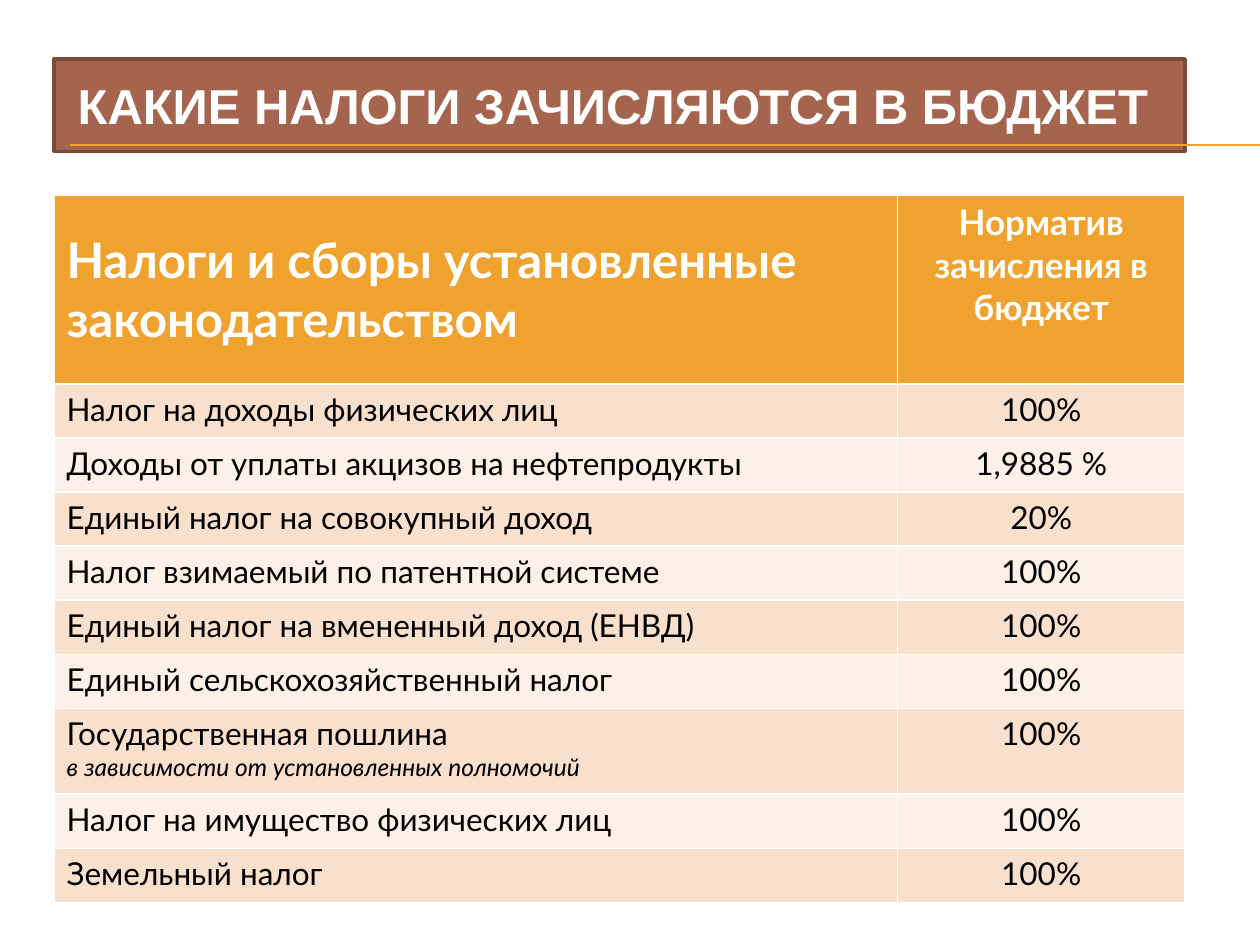
from pptx import Presentation
from pptx.dml.color import RGBColor
from pptx.enum.shapes import MSO_CONNECTOR
from pptx.enum.text import MSO_ANCHOR, MSO_AUTO_SIZE, PP_ALIGN
from pptx.oxml.ns import qn
from pptx.util import Cm, Pt
from lxml import etree

STRAIGHT = MSO_CONNECTOR.STRAIGHT
MIDDLE, TOP = MSO_ANCHOR.MIDDLE, MSO_ANCHOR.TOP
LEFT, CENTER = PP_ALIGN.LEFT, PP_ALIGN.CENTER

HEADING = "КАКИЕ НАЛОГИ ЗАЧИСЛЯЮТСЯ В БЮДЖЕТ "
HEADER = ("Налоги и сборы установленные законодательством",
          "Норматив зачисления в бюджет")
# Tax, share credited to the budget, optional remark
TAXES = [
    ("Налог на доходы физических лиц", "100%", None),
    ("Доходы от уплаты акцизов на нефтепродукты", "1,9885 %", None),
    ("Единый налог на совокупный доход", "20%", None),
    ("Налог взимаемый по патентной системе", "100%", None),
    ("Единый налог на вмененный доход (ЕНВД)", "100%", None),
    ("Единый сельскохозяйственный налог", "100%", None),
    ("Государственная пошлина", "100%", "в зависимости от установленных полномочий"),
    ("Налог на имущество физических лиц", "100%", None),
    ("Земельный налог", "100%", None),
]

COLORS = {
    "accent": "F0A22E", "heading": "A5644E", "heading_line": "7A4A3A",
    "band_dark": "F9E0CD", "band_light": "FCF0E8",
    "white": "FFFFFF", "black": "000000",
}
SLIDE_W, SLIDE_H = Cm(25.4), Cm(19.05)
MARGIN, CONTENT_W = Cm(1.09), Cm(22.8)
HEADING_TOP, HEADING_H = Cm(1.52), Cm(1.2)
RULE_LEFT, RULE_TOPS = Cm(1.42), (Cm(2.92), Cm(2.94))
TABLE_TOP = Cm(3.93)
COLUMN_WIDTHS = (Cm(17), Cm(5.8))
HEADER_H, ROW_H, REMARK_ROW_H = Cm(3.81), Cm(1.09), Cm(1.73)


def rgb(name):
    return RGBColor.from_string(COLORS[name])


def style(paragraph, size, color, align, font="Lato", bold=False, italic=False):
    paragraph.alignment = align
    face = paragraph.font
    face.name, face.size, face.bold, face.italic = font, Pt(size), bold, italic
    face.color.rgb = rgb(color)


def fill_cell(cell, text, fill, size, color, align, bold=False, anchor=TOP):
    cell.fill.solid()
    cell.fill.fore_color.rgb = rgb(fill)
    cell.vertical_anchor = anchor
    cell.text = text
    style(cell.text_frame.paragraphs[0], size, color, align, bold=bold)


def add_rules(slide):
    for top in RULE_TOPS:
        rule = slide.shapes.add_connector(STRAIGHT, RULE_LEFT, top, SLIDE_W, top)
        rule.line.color.rgb = rgb("accent")
        rule.line.width = Pt(0.75)
        etree.SubElement(rule._element.spPr, qn("a:effectLst"))


def add_heading(slide):
    heading = slide.shapes.title
    heading.left, heading.top = MARGIN, HEADING_TOP
    heading.width, heading.height = CONTENT_W, HEADING_H
    heading.fill.solid()
    heading.fill.fore_color.rgb = rgb("heading")
    heading.line.color.rgb = rgb("heading_line")
    heading.line.width = Pt(2)
    frame = heading.text_frame
    frame.margin_left = frame.margin_right = frame.margin_top = frame.margin_bottom = 0
    frame.word_wrap = True
    frame.auto_size = MSO_AUTO_SIZE.SHAPE_TO_FIT_TEXT
    frame.vertical_anchor = MIDDLE
    frame.text = HEADING
    style(frame.paragraphs[0], 28, "white", CENTER, font="Arial", bold=True)


def add_tax_table(slide):
    heights = [HEADER_H] + [REMARK_ROW_H if remark else ROW_H for _, _, remark in TAXES]
    table = slide.shapes.add_table(len(heights), len(COLUMN_WIDTHS), MARGIN, TABLE_TOP,
                                   CONTENT_W, sum(heights)).table
    for column, width in zip(table.columns, COLUMN_WIDTHS):
        column.width = width
    for row, height in zip(table.rows, heights):
        row.height = height

    fill_cell(table.cell(0, 0), HEADER[0], "accent", 28, "white", LEFT, True, MIDDLE)
    fill_cell(table.cell(0, 1), HEADER[1], "accent", 20, "white", CENTER, True)
    for number, (tax, share, remark) in enumerate(TAXES, start=1):
        band = "band_dark" if number % 2 else "band_light"
        tax_cell = table.cell(number, 0)
        fill_cell(tax_cell, tax, band, 18, "black", LEFT)
        fill_cell(table.cell(number, 1), share, band, 18, "black", CENTER)
        if remark:
            paragraph = tax_cell.text_frame.add_paragraph()
            paragraph.text = remark
            style(paragraph, 14, "black", LEFT, italic=True)


def main():
    deck = Presentation()
    deck.slide_width, deck.slide_height = SLIDE_W, SLIDE_H
    slide = deck.slides.add_slide(deck.slide_layouts.get_by_name("Title Only"))
    add_rules(slide)
    add_tax_table(slide)
    add_heading(slide)
    deck.save("out.pptx")


if __name__ == "__main__":
    main()
